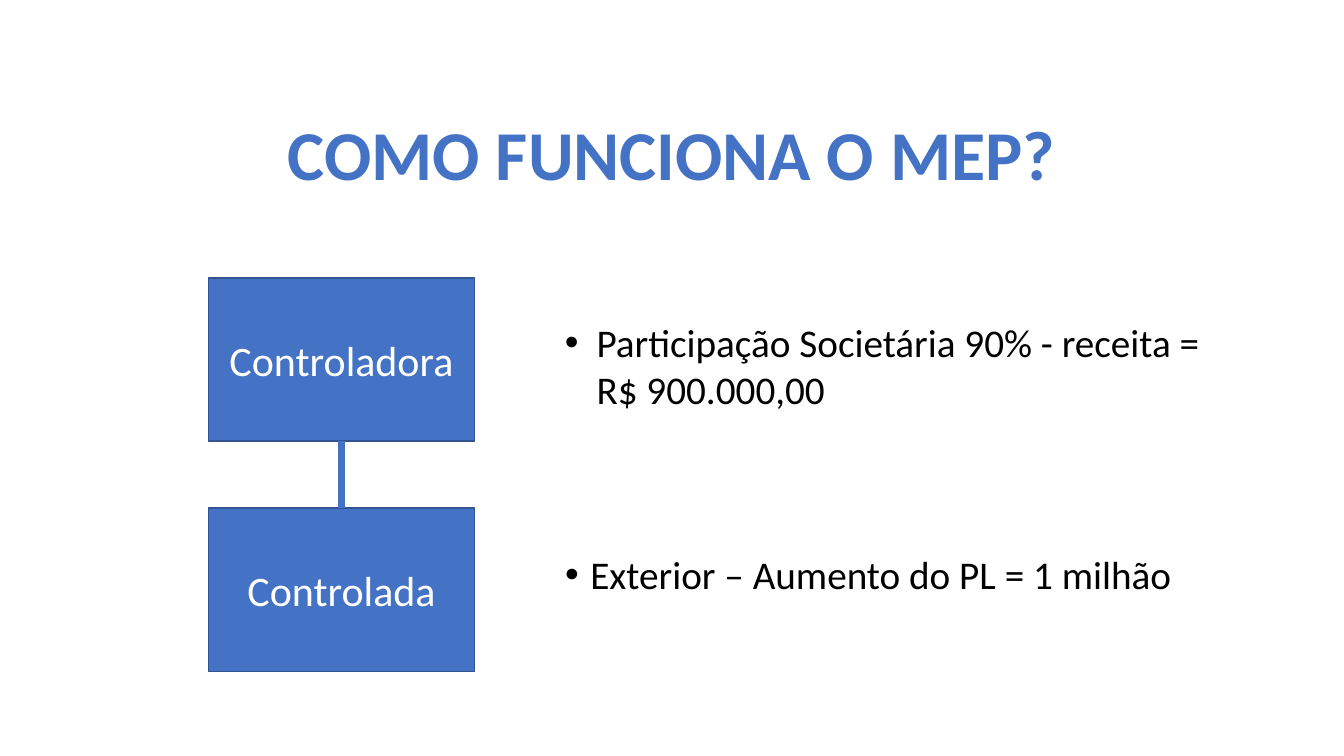
from dataclasses import dataclass

from lxml.etree import SubElement
from pptx import Presentation
from pptx.dml.color import RGBColor
from pptx.enum.shapes import MSO_CONNECTOR, MSO_SHAPE
from pptx.enum.text import MSO_ANCHOR, MSO_AUTO_SIZE, PP_ALIGN
from pptx.oxml.ns import qn
from pptx.shapes.autoshape import Shape
from pptx.slide import Slide
from pptx.util import Pt

BLUE = RGBColor(0x44, 0x72, 0xC4)
DARK_BLUE = RGBColor(0x32, 0x54, 0x91)
WHITE = RGBColor(0xFF, 0xFF, 0xFF)
BLACK = RGBColor(0x00, 0x00, 0x00)
FONT = "Calibri"


@dataclass
class Company:
    name: str
    top: float


COMPANIES = [Company("Controladora", 198.5), Company("Controlada", 363)]
COMPANY_LEFT, COMPANY_WIDTH, COMPANY_HEIGHT = 149, 190, 116.5
NOTES_LEFT = 396.5


def place(sp: Shape, left: float, top: float, width: float, height: float) -> None:
    sp.left, sp.top, sp.width, sp.height = Pt(left), Pt(top), Pt(width), Pt(height)


def write(sp: Shape, text: str, *, size: float, color: RGBColor, bold: bool = False,
          align: PP_ALIGN = PP_ALIGN.LEFT, anchor: MSO_ANCHOR = MSO_ANCHOR.TOP,
          line_spacing: float = 1.0, bullet_indent: float = 0) -> None:
    tf = sp.text_frame
    tf.word_wrap = True
    tf.auto_size = MSO_AUTO_SIZE.NONE
    tf.vertical_anchor = anchor
    p = tf.paragraphs[0]
    p.alignment = align
    p.line_spacing = line_spacing
    p.space_before = Pt(0)
    if bullet_indent:
        props = p._p.get_or_add_pPr()
        props.set("marL", str(Pt(bullet_indent)))
        props.set("indent", str(-Pt(bullet_indent)))
        SubElement(props, qn("a:buFont"), typeface="Arial")
        SubElement(props, qn("a:buChar"), char="•")
    r = p.add_run()
    r.text = text
    r.font.name = FONT
    r.font.size = Pt(size)
    r.font.bold = bold
    r.font.color.rgb = color


def add_company(s: Slide, company: Company) -> Shape:
    sp = s.shapes.add_shape(MSO_SHAPE.RECTANGLE, Pt(COMPANY_LEFT), Pt(company.top),
                            Pt(COMPANY_WIDTH), Pt(COMPANY_HEIGHT))
    sp.shadow.inherit = False
    sp.fill.solid()
    sp.fill.fore_color.rgb = BLUE
    sp.line.color.rgb = DARK_BLUE
    sp.line.width = Pt(1)
    write(sp, company.name, size=30, color=WHITE, align=PP_ALIGN.CENTER,
          anchor=MSO_ANCHOR.MIDDLE)
    return sp


def join(s: Slide, upper: Shape, lower: Shape) -> None:
    line = s.shapes.add_connector(MSO_CONNECTOR.STRAIGHT, Pt(0), Pt(0), Pt(0), Pt(0))
    line.begin_connect(upper, 2)
    line.end_connect(lower, 0)
    line.line.color.rgb = BLUE
    line.line.width = Pt(4.5)
    SubElement(line._element.spPr, qn("a:effectLst"))


def main() -> None:
    prs = Presentation()
    prs.slide_width, prs.slide_height = Pt(960), Pt(540)
    s = prs.slides.add_slide(prs.slide_layouts[1])

    title = s.shapes.title
    place(title, 66, 60.5, 828, 104.5)
    write(title, "COMO FUNCIONA O MEP?", size=50, color=BLUE, bold=True,
          align=PP_ALIGN.CENTER, anchor=MSO_ANCHOR.MIDDLE, line_spacing=0.9)

    body = s.placeholders[1]
    place(body, NOTES_LEFT, 393, 532, 116.5)
    write(body, "Exterior – Aumento do PL = 1 milhão", size=28, color=BLACK,
          line_spacing=0.9, bullet_indent=18)

    parent, subsidiary = [add_company(s, company) for company in COMPANIES]
    join(s, parent, subsidiary)

    stake = s.shapes.add_textbox(Pt(NOTES_LEFT), Pt(224), Pt(481.5), Pt(75))
    write(stake, "Participação Societária 90% - receita = R$ 900.000,00", size=28,
          color=BLACK, bullet_indent=22.5)

    prs.save("out.pptx")


if __name__ == "__main__":
    main()
